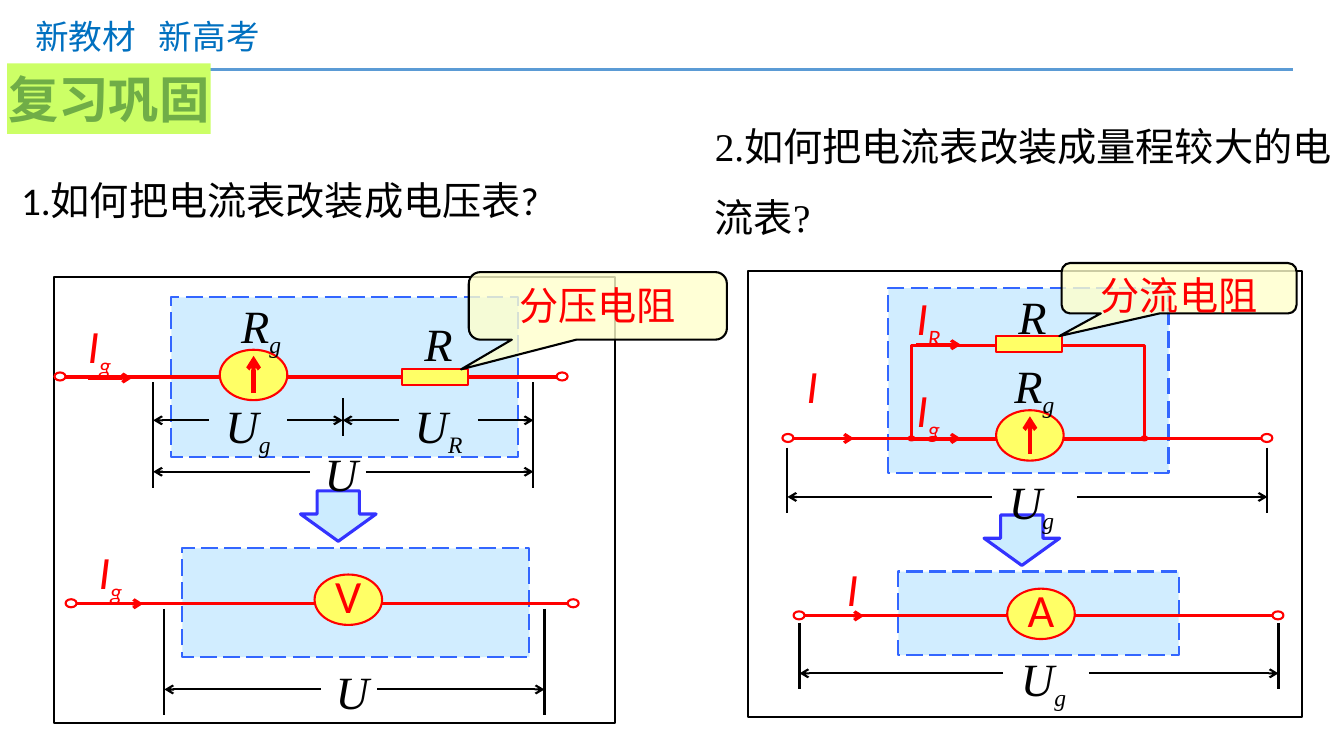
from dataclasses import dataclass
from typing import NamedTuple, Optional, Sequence, Union

from lxml import etree
from pptx import Presentation
from pptx.dml.color import RGBColor
from pptx.enum import dml, shapes, text
from pptx.oxml import ns
from pptx.shapes.autoshape import Shape
from pptx.shapes.shapetree import GroupShapes, SlideShapes
from pptx.util import Inches, Pt

Canvas = Union[GroupShapes, SlideShapes]
SHAPE = shapes.MSO_SHAPE


@dataclass(frozen=True)
class Theme:
    black: str = "000000"
    white: str = "FFFFFF"
    red: str = "FF0000"
    header: str = "0070C0"
    rule: str = "5B9BD5"
    title: str = "70AD47"
    title_fill: str = "CCFF66"
    zone: str = "CCECFF"
    zone_line: str = "3366FF"
    arrow_line: str = "3333FF"
    yellow: str = "FFFF66"
    callout: str = "FFFFCC"
    sans: str = "Calibri"
    serif: str = "Times New Roman"
    chinese: str = "Noto Sans CJK SC"
    header_size: int = 24
    title_size: int = 36
    body_size: int = 28
    symbol_size: int = 33
    subscript_size: int = 29
    thin: float = 1.5
    wire: float = 2.25
    needle: float = 3


THEME = Theme()


class Box(NamedTuple):
    left: float
    top: float
    width: float
    height: float


class Run(NamedTuple):
    content: str
    size: float
    baseline: int = 0
    spacing: int = 0


class Symbol(NamedTuple):
    base: str
    subscript: str
    left: float
    top: float
    width: float = 1


class Current(NamedTuple):
    x: float
    y: float
    subscript: str
    label_left: float
    label_top: float


class Tick(NamedTuple):
    x: float
    top: float
    bottom: float


class Span(NamedTuple):
    left: float
    right: float
    y: float
    gap_left: float
    gap_right: float


@dataclass(frozen=True)
class Circuit:
    zone: Box
    terminals: tuple[float, float]
    wire_y: float
    meter: tuple[float, float]
    ticks: Sequence[Tick]
    spans: Sequence[Span]
    symbols: Sequence[Symbol]
    currents: Sequence[Current]
    letter: str = ""
    resistor: Optional[Box] = None
    shunt: Optional[Box] = None


@dataclass(frozen=True)
class Panel:
    frame: Box
    lower: Circuit
    arrow: Box
    upper: Circuit
    callout: Box
    callout_text: str
    pointer: tuple[float, float]


def add_text(shape: Shape, runs: Sequence[Run], *, font: str, color: str,
             bold: bool = False, italic: bool = False, centered: bool = False,
             line_spacing: float = 1, margins: tuple[float, float] = (0.1, 0.05),
             wrap: bool = True, grow: bool = True, middle: bool = False) -> None:
    frame = shape.text_frame
    frame.word_wrap = wrap
    frame.auto_size = text.MSO_AUTO_SIZE.SHAPE_TO_FIT_TEXT if grow else text.MSO_AUTO_SIZE.NONE
    frame.vertical_anchor = text.MSO_ANCHOR.MIDDLE if middle else text.MSO_ANCHOR.TOP
    frame.margin_left = frame.margin_right = Inches(margins[0])
    frame.margin_top = frame.margin_bottom = Inches(margins[1])
    paragraph = frame.paragraphs[0]
    paragraph.alignment = text.PP_ALIGN.CENTER if centered else text.PP_ALIGN.LEFT
    paragraph.line_spacing = line_spacing
    for item in runs:
        run = paragraph.add_run()
        run.text = item.content
        run.font.name, run.font.size = font, Pt(item.size)
        run.font.bold, run.font.italic = bold, italic
        run.font.color.rgb = RGBColor.from_string(color)
        properties = run.font._element
        etree.SubElement(properties, ns.qn("a:ea")).set("typeface", THEME.chinese)
        if item.baseline:
            properties.set("baseline", str(item.baseline * 1000))
        if item.spacing:
            properties.set("spc", str(item.spacing * 100))


def add_box(canvas: Canvas, box: Box) -> Shape:
    return canvas.add_textbox(*map(Inches, box))


def add_figure(canvas: Canvas, kind: SHAPE, box: Box, *, fill: str = "", alpha: int = 100,
               line: str = "", width: float = THEME.thin, dashed: bool = False,
               adjustments: Sequence[float] = ()) -> Shape:
    shape = canvas.add_shape(kind, *map(Inches, box))
    shape.shadow.inherit = False
    for index, value in enumerate(adjustments):
        shape.adjustments[index] = value
    if fill:
        shape.fill.solid()
        shape.fill.fore_color.rgb = RGBColor.from_string(fill)
        if alpha < 100:
            color = shape._element.spPr.find(".//" + ns.qn("a:srgbClr"))
            etree.SubElement(color, ns.qn("a:alpha")).set("val", str(alpha * 1000))
    else:
        shape.fill.background()
    if line:
        shape.line.color.rgb = RGBColor.from_string(line)
        shape.line.width = Pt(width)
        if dashed:
            shape.line.dash_style = dml.MSO_LINE.LONG_DASH
    else:
        shape.line.fill.background()
    return shape


def add_line(canvas: Canvas, start: tuple[float, float], end: tuple[float, float], *,
             color: str = THEME.black, width: float = THEME.thin, arrow: bool = False) -> None:
    connector = canvas.add_connector(shapes.MSO_CONNECTOR.STRAIGHT, *map(Inches, start + end))
    connector.line.color.rgb = RGBColor.from_string(color)
    connector.line.width = Pt(width)
    if arrow:
        outline = connector.line._get_or_add_ln()
        etree.SubElement(outline, ns.qn("a:tailEnd")).set("type", "arrow")
    etree.SubElement(connector._element.spPr, ns.qn("a:effectLst"))


def symbol_runs(base: str, subscript: str, baseline: int) -> list[Run]:
    runs = [Run(base, THEME.symbol_size)]
    return runs + [Run(subscript, THEME.subscript_size, baseline)] if subscript else runs


def add_meter(canvas: Canvas, position: tuple[float, float], letter: str) -> None:
    left, top = position
    dial = add_figure(canvas, SHAPE.OVAL, Box(left, top, 0.67, 0.5), fill=THEME.yellow, line=THEME.red)
    if letter:
        add_text(dial, [Run(letter, THEME.symbol_size)], font=THEME.sans, color=THEME.red,
                 centered=True, line_spacing=0.8, wrap=False, grow=False, middle=True)
    else:
        center = left + 0.335
        add_line(canvas, (center, top + 0.43), (center, top + 0.06),
                 color=THEME.red, width=THEME.needle, arrow=True)


def add_circuit(slide_shapes: SlideShapes, circuit: Circuit) -> None:
    canvas = slide_shapes.add_group_shape().shapes
    y = circuit.wire_y
    add_figure(canvas, SHAPE.RECTANGLE, circuit.zone, fill=THEME.zone, alpha=90,
               line=THEME.zone_line, dashed=True)
    for tick in circuit.ticks:
        add_line(canvas, (tick.x, tick.top), (tick.x, tick.bottom))
    for span in circuit.spans:
        add_line(canvas, (span.gap_left, span.y), (span.left, span.y), arrow=True)
        add_line(canvas, (span.gap_right, span.y), (span.right, span.y), arrow=True)
    left, right = circuit.terminals
    add_line(canvas, (left + 0.1, y), (right, y), color=THEME.red, width=THEME.wire)
    for terminal in circuit.terminals:
        add_figure(canvas, SHAPE.OVAL, Box(terminal, y - 0.045, 0.11, 0.08), line=THEME.red)
    if circuit.shunt:
        shunt = circuit.shunt
        add_figure(canvas, SHAPE.RECTANGLE, shunt, line=THEME.red, width=THEME.wire)
        for x in (shunt.left, shunt.left + shunt.width):
            add_figure(canvas, SHAPE.OVAL, Box(x - 0.04, y - 0.03, 0.08, 0.06), fill=THEME.red)
    if circuit.resistor:
        add_figure(canvas, SHAPE.RECTANGLE, circuit.resistor, fill=THEME.yellow, line=THEME.red)
    add_meter(canvas, circuit.meter, circuit.letter)
    for current in circuit.currents:
        add_line(canvas, (current.x, current.y), (current.x + 0.44, current.y),
                 color=THEME.red, width=THEME.wire, arrow=True)
        label = add_box(canvas, Box(current.label_left, current.label_top, 0.86, 0.65))
        add_text(label, symbol_runs("I", current.subscript, -28),
                 font=THEME.sans, color=THEME.red, italic=True)
    for symbol in circuit.symbols:
        label = add_box(canvas, Box(symbol.left, symbol.top, symbol.width, 0.54))
        add_text(label, symbol_runs(symbol.base, symbol.subscript, -25), font=THEME.serif,
                 color=THEME.black, italic=True, centered=True, line_spacing=0.8)


def add_panel(canvas: SlideShapes, panel: Panel) -> None:
    add_figure(canvas, SHAPE.RECTANGLE, panel.frame, fill=THEME.white, alpha=80, line=THEME.black)
    add_circuit(canvas, panel.lower)
    add_figure(canvas, SHAPE.DOWN_ARROW, panel.arrow, fill=THEME.zone, line=THEME.arrow_line,
               width=THEME.wire, adjustments=(0.56, 0.54))
    add_circuit(canvas, panel.upper)
    callout = add_figure(canvas, SHAPE.ROUNDED_RECTANGULAR_CALLOUT, panel.callout, fill=THEME.callout,
                         alpha=80, line=THEME.black, adjustments=(*panel.pointer, 0.17))
    add_text(callout, [Run(panel.callout_text, THEME.body_size)], font=THEME.chinese,
             color=THEME.red, centered=True, margins=(0.12, 0.06), grow=False)


VOLTMETER = Panel(
    frame=Box(0.54, 2.75, 5.56, 4.42),
    lower=Circuit(
        Box(1.81, 5.44, 3.44, 1.08), (0.65, 5.63), 5.99, (3.12, 5.7),
        [Tick(x, 6.04, 7.09) for x in (1.63, 5.4)], [Span(1.63, 5.4, 6.84, 3.18, 3.74)],
        [Symbol("U", "", 3.16, 6.64, 0.67)], [Current(0.98, 5.99, "g", 0.88, 5.34)], letter="V"),
    arrow=Box(2.98, 4.87, 0.75, 0.5),
    upper=Circuit(
        Box(1.7, 2.95, 3.44, 1.58), (0.54, 5.52), 3.74, (2.18, 3.47),
        [Tick(1.52, 3.79, 4.84), Tick(5.29, 3.79, 4.84), Tick(3.4, 3.95, 4.33)],
        [Span(1.52, 5.29, 4.68, 3.07, 3.63), Span(1.52, 3.4, 4.17, 2.07, 2.85),
         Span(3.4, 5.29, 4.17, 3.96, 4.74)],
        [Symbol("U", "", 3.05, 4.48, 0.67), Symbol("R", "g", 2.09, 2.97), Symbol("R", "", 3.85, 3.19),
         Symbol("U", "g", 1.96, 3.96), Symbol("U", "R", 3.85, 3.96)],
        [Current(0.87, 3.75, "g", 0.77, 3.1)], resistor=Box(3.99, 3.66, 0.65, 0.16)),
    callout=Box(4.65, 2.7, 2.56, 0.67), callout_text="分压电阻", pointer=(-0.53, 0.94))

AMMETER = Panel(
    frame=Box(7.42, 2.69, 5.49, 4.42),
    lower=Circuit(
        Box(8.91, 5.67, 2.78, 0.83), (7.87, 12.62), 6.11, (9.99, 5.84),
        [Tick(x, 6.18, 6.84) for x in (7.93, 12.68)], [Span(7.93, 12.68, 6.68, 9.95, 10.8)],
        [Symbol("U", "g", 9.86, 6.47, 0.98)], [Current(8.13, 6.11, "", 8.3, 5.51)], letter="A"),
    arrow=Box(9.76, 5.11, 0.75, 0.5),
    upper=Circuit(
        Box(8.81, 2.86, 2.78, 1.83), (7.76, 12.51), 4.35, (9.88, 4.07),
        [Tick(x, 4.44, 5.09) for x in (7.81, 12.57)], [Span(7.81, 12.57, 4.93, 9.84, 10.68)],
        [Symbol("U", "g", 9.74, 4.72, 0.98), Symbol("R", "", 9.74, 2.92), Symbol("R", "g", 9.76, 3.57)],
        [Current(8.03, 4.35, "", 7.9, 3.5), Current(9.09, 4.35, "g", 8.99, 3.73),
         Current(9.09, 3.42, "R", 8.99, 2.82)],
        resistor=Box(9.88, 3.33, 0.65, 0.16), shunt=Box(9.04, 3.43, 2.31, 0.93)),
    callout=Box(10.53, 2.61, 2.33, 0.5), callout_text="分流电阻", pointer=(-0.51, 0.95))


def main() -> None:
    presentation = Presentation()
    presentation.slide_width, presentation.slide_height = Inches(13.33), Inches(7.5)
    canvas = presentation.slides.add_slide(presentation.slide_layouts[6]).shapes
    size = THEME.header_size
    add_text(add_box(canvas, Box(0.25, 0.11, 3.97, 0.5)),
             [Run("新教材", size), Run(" ", size, spacing=11), Run("新高考", size)],
             font=THEME.chinese, color=THEME.header)
    add_line(canvas, (0.16, 0.69), (12.82, 0.69), color=THEME.rule)
    title = add_figure(canvas, SHAPE.RECTANGLE, Box(0.07, 0.63, 2.02, 0.7), fill=THEME.title_fill)
    add_text(title, [Run("复习巩固", THEME.title_size)], font=THEME.chinese, color=THEME.title,
             bold=True, centered=True, margins=(0, 0.05))
    for question, font, box, panel in (
            ("1.如何把电流表改装成电压表?", THEME.sans, Box(0.21, 1.52, 5.53, 0.71), VOLTMETER),
            ("2.如何把电流表改装成量程较大的电流表?", THEME.serif, Box(7.09, 0.98, 6.17, 1.41), AMMETER)):
        add_text(add_box(canvas, box), [Run(question, THEME.body_size)], font=font,
                 color=THEME.black, line_spacing=1.5, margins=(0, 0))
        add_panel(canvas, panel)
    presentation.save("out.pptx")


if __name__ == "__main__":
    main()
